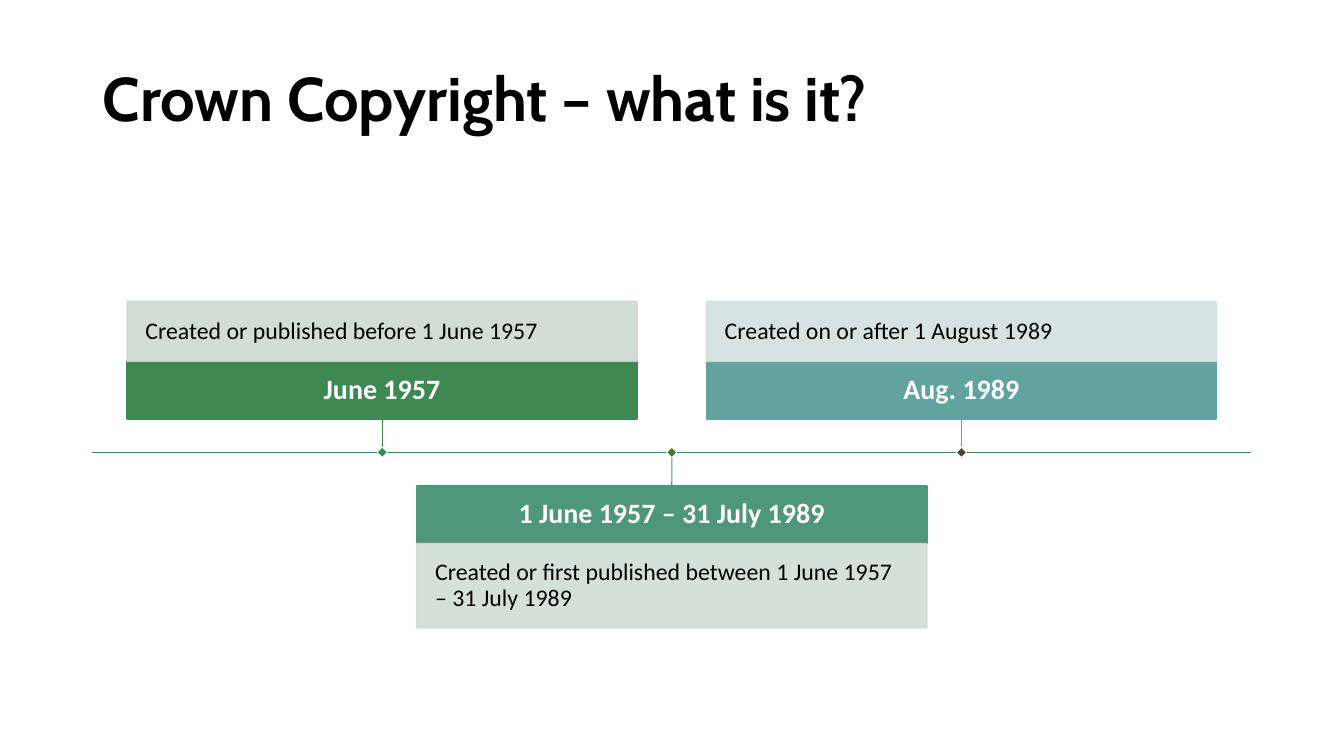
from lxml.etree import SubElement
from pptx import Presentation
from pptx.dml.color import RGBColor
from pptx.enum.shapes import MSO_CONNECTOR as CONN, MSO_SHAPE as SHAPE
from pptx.enum.text import MSO_ANCHOR as ANCHOR, MSO_AUTO_SIZE as AUTO, PP_ALIGN as ALIGN
from pptx.oxml.ns import qn
from pptx.util import Cm, Pt

COLORS = {
    "black": "000000", "white": "FFFFFF",
    "green": "3E8853", "jade": "4E977B", "teal": "62A39F",
    "pale_green": "CEDAD1", "pale_jade": "D1DDD7", "pale_teal": "D3E0DF",
    "olive": "5B6C3C", "brown": "534237",
}
AXIS_Y = 11.4
AXIS_LEFT, AXIS_RIGHT = 2.33, 31.53
FIRST_X, PITCH = 9.63, 7.3
BOX_W, HEADER_H, STEM = 12.85, 1.46, 0.84
MARKER = 0.18
EVENTS = [
    ("June 1957", "Created or published before 1 June 1957",
     "green", "pale_green", "green", 1.5),
    ("1 June 1957 – 31 July 1989",
     "Created or first published between 1 June 1957 – 31 July 1989",
     "jade", "pale_jade", "olive", 2.12),
    ("Aug. 1989", "Created on or after 1 August 1989",
     "teal", "pale_teal", "brown", 1.5),
]


class Deck:
    def __init__(self):
        self.prs = Presentation()
        self.prs.slide_width, self.prs.slide_height = Cm(33.87), Cm(19.05)
        self.slide = self.prs.slides.add_slide(self.prs.slide_layouts[5])

    def rgb(self, name):
        return RGBColor.from_string(COLORS[name])

    def text(self, s, text, font, size, color, bold, align, anchor):
        tf = s.text_frame
        tf.text = text
        tf.word_wrap = True
        tf.auto_size = AUTO.NONE
        tf.vertical_anchor = anchor
        p = tf.paragraphs[0]
        p.alignment = align
        p.line_spacing = 0.9
        f = p.runs[0].font
        f.name, f.size, f.bold = font, Pt(size), bold
        f.color.rgb = self.rgb(color)

    def title(self, text):
        s = self.slide.shapes.title
        s.left, s.top, s.width, s.height = Cm(2.33), Cm(0.71), Cm(29.2), Cm(2.82)
        self.text(s, text, "Cabin", 44, "black", True, ALIGN.LEFT, ANCHOR.BOTTOM)

    def rect(self, x, y, w, h, fill, line, weight, opacity=100):
        s = self.slide.shapes.add_shape(SHAPE.RECTANGLE, Cm(x), Cm(y), Cm(w), Cm(h))
        s.shadow.inherit = False
        s.fill.solid()
        s.fill.fore_color.rgb = self.rgb(fill)
        s.line.color.rgb = self.rgb(line)
        s.line.width = Pt(weight)
        if opacity < 100:
            for c in s._element.spPr.iter(qn("a:srgbClr")):
                SubElement(c, qn("a:alpha"), val=str(opacity * 1000))
        return s

    def box(self, x, y, h, text, color, font_color, size, bold, align, inset, opacity=100):
        s = self.rect(x, y, BOX_W, h, color, color, 1.25, opacity)
        tf = s.text_frame
        tf.margin_left = tf.margin_right = tf.margin_top = tf.margin_bottom = Cm(inset)
        self.text(s, text, "Calibri", size, font_color, bold, align, ANCHOR.MIDDLE)
        return s

    def line(self, x1, y1, x2, y2, color, weight):
        s = self.slide.shapes.add_connector(CONN.STRAIGHT, Cm(x1), Cm(y1), Cm(x2), Cm(y2))
        s.line.color.rgb = self.rgb(color)
        s.line.width = Pt(weight)
        SubElement(s._element.spPr, qn("a:effectLst"))
        return s

    def marker(self, x, color):
        s = self.rect(x - MARKER / 2, AXIS_Y - MARKER / 2, MARKER, MARKER, color, "white", 0.5)
        s.rotation = 45

    def event(self, x, above, date, detail, color, pale, dot, detail_h):
        if above:
            header_y = AXIS_Y - STEM - HEADER_H
            detail_y, edge_y, side = header_y - detail_h, AXIS_Y - STEM, 2
        else:
            header_y = edge_y = AXIS_Y + STEM
            detail_y, side = header_y + HEADER_H, 0
        left = x - BOX_W / 2
        header = self.box(left, header_y, HEADER_H, date, color, "white",
                          20, True, ALIGN.CENTER, 0.28)
        self.box(left, detail_y, detail_h, detail, pale, "black",
                 17, False, ALIGN.LEFT, 0.46, 90)
        stem = self.line(x, edge_y, x, AXIS_Y, color, 0.75)
        stem.begin_connect(header, side)
        self.marker(x, dot)


def main():
    deck = Deck()
    deck.title("Crown Copyright – what is it?")
    deck.line(AXIS_LEFT, AXIS_Y, AXIS_RIGHT, AXIS_Y, "green", 1.25)
    for i, event in enumerate(EVENTS):
        deck.event(FIRST_X + i * PITCH, i % 2 == 0, *event)
    deck.prs.save("out.pptx")


if __name__ == "__main__":
    main()
